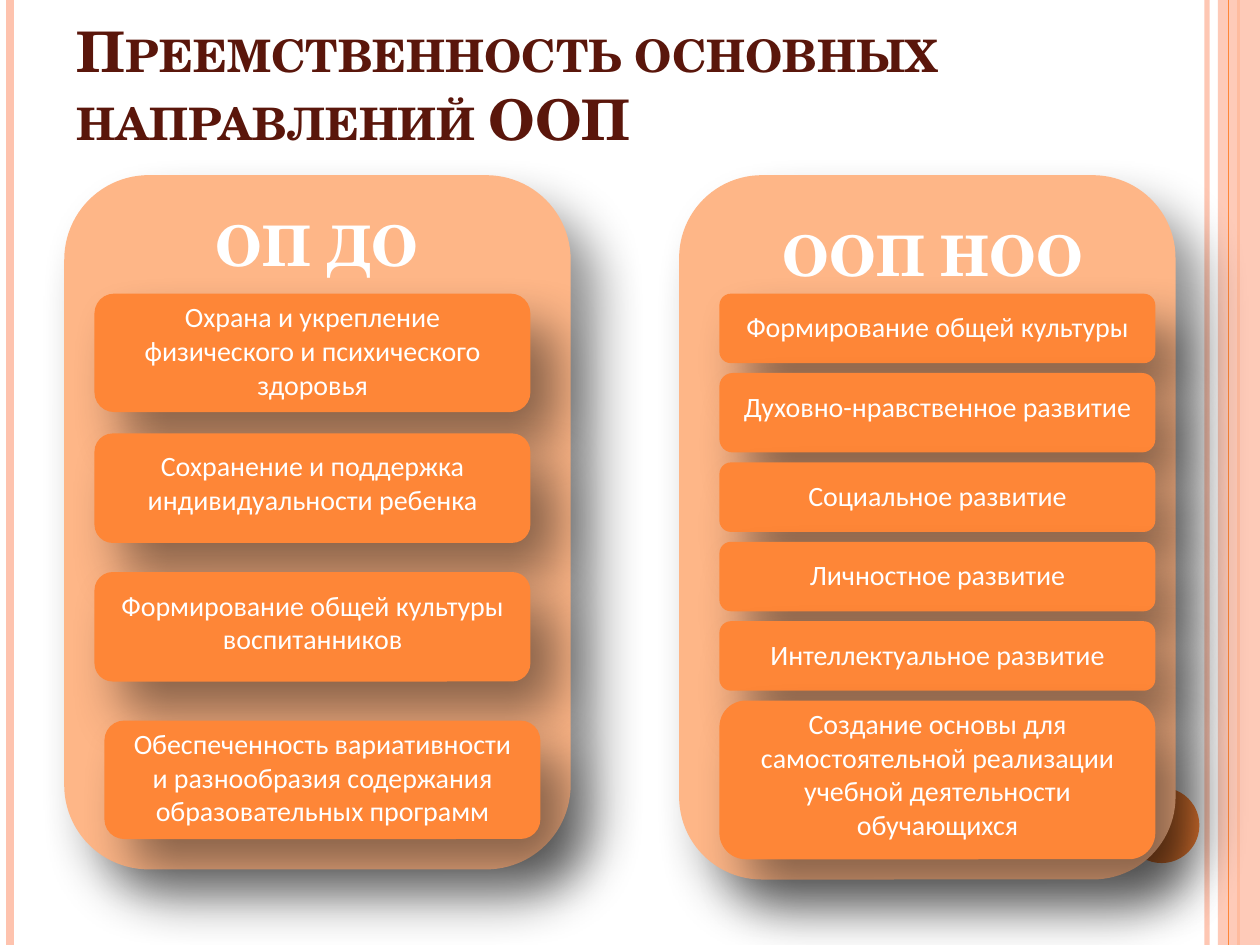
import math

import pptx
import pptx.dml.color
import pptx.enum.shapes
import pptx.enum.text
import pptx.oxml.ns
import pptx.util
import lxml.etree

Pt = pptx.util.Pt
RGB = pptx.dml.color.RGBColor
KIND = pptx.enum.shapes.MSO_SHAPE
ALIGN = pptx.enum.text.PP_ALIGN
ANCHOR = pptx.enum.text.MSO_ANCHOR
qn = pptx.oxml.ns.qn

ORANGE = RGB(0xFE, 0x86, 0x37)
PEACH = RGB(0xFE, 0xB6, 0x87)
PINK = RGB(0xFE, 0xC3, 0xAE)
BROWN = RGB(0x5A, 0x16, 0x0B)
WHITE = RGB(0xFF, 0xFF, 0xFF)

SERIF = "TeX Gyre Schola"
SANS = "Calibri"
WIDE, HIGH = 720, 540
CARD = 249.1
GAP = 5.67

LEFT = [
    (54, 167.8, 67.7, 0, 3, "Охрана и укрепление физического и психического здоровья"),
    (54, 247.7, 62.6, 5, 2, "Сохранение и поддержка индивидуальности ребенка"),
    (54, 326.9, 62.6, 5.7, 2, "Формирование общей культуры воспитанников"),
    (59.7, 411.8, 67.7, 0, 3,
     "Обеспеченность вариативности и разнообразия содержания образовательных программ"),
]
RIGHT = [
    (39.7, GAP, 1, "Формирование общей культуры"),
    (45.4, GAP, 1, "Духовно-нравственное развитие"),
    (39.7, GAP, 1, "Социальное развитие"),
    (39.7, GAP, 1, "Личностное развитие"),
    (39.7, GAP, 1, "Интеллектуальное развитие"),
    (90.7, 0, 4,
     "Создание основы для самостоятельной реализации учебной деятельности обучающихся"),
]


def add_fade(item, alpha):
    for color in item._element.iter(qn("a:srgbClr")):
        lxml.etree.SubElement(color, qn("a:alpha"), val=str(alpha * 1000))


def add_shade(shape, blur=30, right=15, down=18, alpha=45):
    effect = shape._element.spPr.find(qn("a:effectLst"))
    angle = math.degrees(math.atan2(down, right))
    outer = lxml.etree.SubElement(
        effect, qn("a:outerShdw"), blurRad=str(int(Pt(blur))),
        dist=str(int(Pt(math.hypot(right, down)))), dir=str(round(angle * 60000)),
        algn="tl", rotWithShape="0")
    color = lxml.etree.SubElement(outer, qn("a:srgbClr"), val="000000")
    lxml.etree.SubElement(color, qn("a:alpha"), val=str(alpha * 1000))


def add_shape(slide, kind, x, y, w, h, fill):
    shape = slide.shapes.add_shape(kind, Pt(x), Pt(y), Pt(w), Pt(h))
    shape.fill.solid()
    shape.fill.fore_color.rgb = fill
    shape.line.fill.background()
    shape.shadow.inherit = False
    return shape


def add_block(slide, x, y, w, h, fill):
    add_shade(add_shape(slide, KIND.ROUNDED_RECTANGLE, x, y, w, h, fill))


def add_stripe(slide, x, color, width):
    line = slide.shapes.add_connector(
        pptx.enum.shapes.MSO_CONNECTOR.STRAIGHT, Pt(x), 0, Pt(x), Pt(HIGH))
    line.line.color.rgb = color
    line.line.width = Pt(width)
    lxml.etree.SubElement(line._element.spPr, qn("a:effectLst"))
    return line


def add_text(slide, text, x, y, w, h, size=16, font=SANS, color=WHITE, bold=False,
             align=ALIGN.CENTER, anchor=ANCHOR.TOP, small=False):
    frame = slide.shapes.add_textbox(Pt(x), Pt(y), Pt(w), Pt(h)).text_frame
    frame.word_wrap = True
    frame.vertical_anchor = anchor
    para = frame.paragraphs[0]
    para.alignment = align
    run = para.add_run()
    run.text = text
    run.font.size = Pt(size)
    run.font.name = font
    run.font.bold = bold
    run.font.color.rgb = color
    if small:
        run._r.get_or_add_rPr().set("cap", "small")


def add_frame(slide):
    add_fade(add_stripe(slide, 689.8, PINK, 3), 93)
    add_stripe(slide, 5.8, PINK, 4.5)
    add_stripe(slide, 707.8, ORANGE, 1.5)
    add_fade(add_shape(slide, KIND.RECTANGLE, 696, 0, 24, HIGH, PINK), 87)
    add_stripe(slide, 702, ORANGE, 0.75)
    add_shape(slide, KIND.OVAL, 642.2, 450, 43.2, 43.2, ORANGE)


def stack_cards():
    top = 167.8
    for high, drop, rows, text in RIGHT:
        yield 411.1, top, high, drop, rows, text
        top += high + GAP


def main():
    deck = pptx.Presentation()
    deck.slide_width, deck.slide_height = Pt(WIDE), Pt(HIGH)
    slide = deck.slides.add_slide(deck.slide_layouts[6])
    add_frame(slide)
    add_text(slide, "Преемственность основных направлений ООП", 36.7, 0, 648, 90,
             size=32, font=SERIF, color=BROWN, bold=True, align=ALIGN.LEFT,
             anchor=ANCHOR.BOTTOM, small=True)
    add_block(slide, 36.7, 100.1, 289.4, 396.7, PEACH)
    add_block(slide, 388.1, 100.1, 283.7, 402.5, PEACH)
    for text, x, y in (("ОП ДО", 70.6, 116.6), ("ООП НОО", 422.6, 122.4)):
        add_text(slide, text, x, y, 221, 46, size=32, font=SERIF, bold=True)
    cards = LEFT + list(stack_cards())
    for x, y, high, drop, rows, text in cards:
        add_block(slide, x, y, CARD, high, ORANGE)
    for x, y, high, drop, rows, text in cards:
        add_text(slide, text, x + 5.5, y + drop, 238.3, 7.2 + 19.4 * rows)
    deck.save("out.pptx")


if __name__ == "__main__":
    main()
